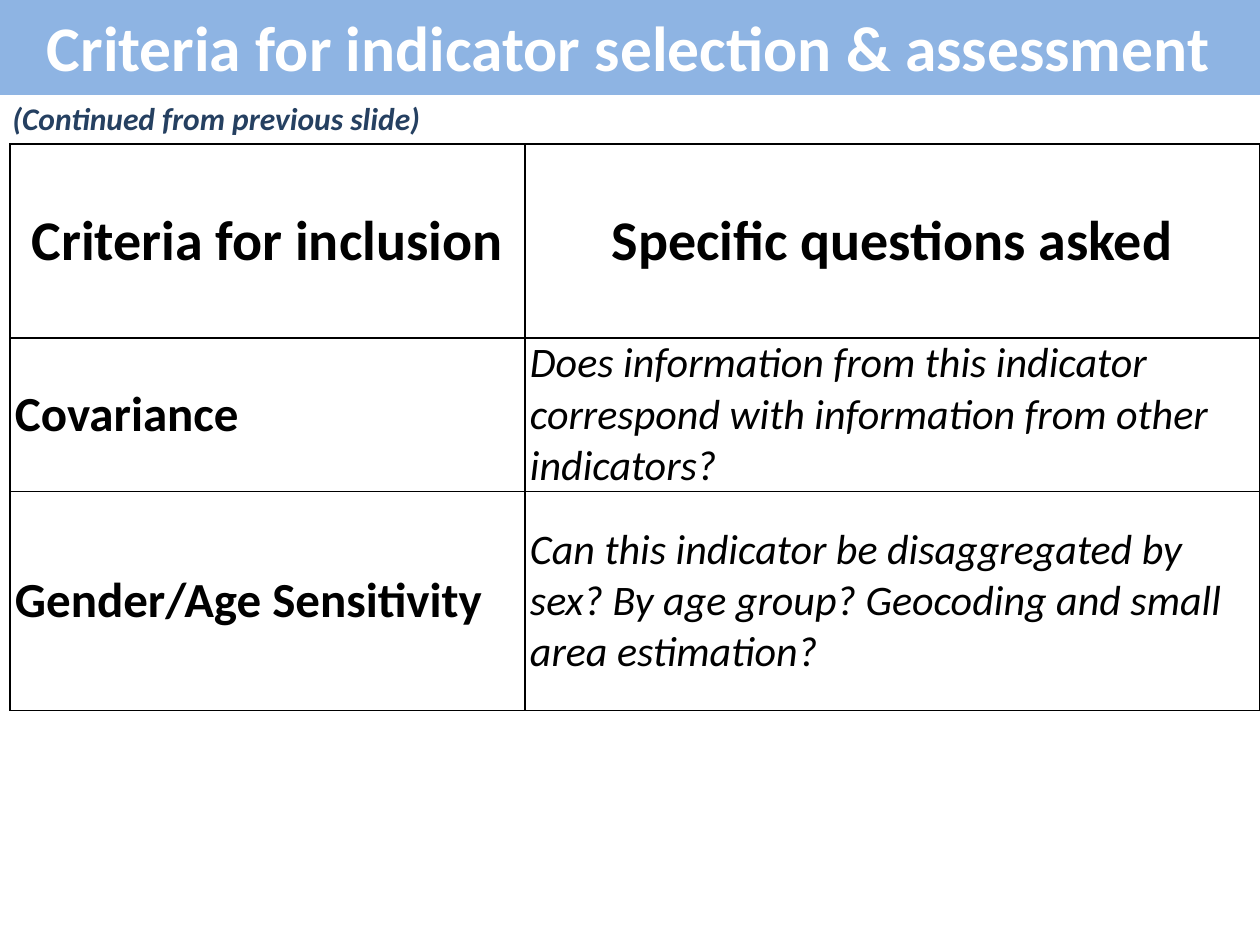
from dataclasses import dataclass

from lxml.etree import SubElement
from pptx import Presentation
from pptx.dml.color import RGBColor as Rgb
from pptx.enum.shapes import MSO_SHAPE as Kind
from pptx.enum.text import MSO_ANCHOR as Anchor, PP_ALIGN as Align
from pptx.oxml.ns import qn
from pptx.util import Emu, Pt

COLORS = {"band": "8EB4E3", "title": "FFFFFF", "note": "254061", "ink": "000000"}
SCALE = 914400 / 126


@dataclass(frozen=True)
class Style:
    size: float
    color: str = "ink"
    bold: bool = False
    slant: bool = False
    align: Align = Align.LEFT


@dataclass(frozen=True)
class Row:
    height: int
    texts: tuple[str, str]
    styles: tuple[Style, Style]


TITLE = Style(36.3, "title", bold=True, align=Align.CENTER)
NOTE = Style(18, "note", bold=True, slant=True)
HEAD = Style(32, bold=True, align=Align.CENTER)
NAME = Style(28, bold=True)
QUERY = Style(24, slant=True)

WIDTHS = (515, 735)
ROWS = (
    Row(194, ("Criteria for inclusion", "Specific questions asked"), (HEAD, HEAD)),
    Row(146, ("Covariance",
              "Does information from this indicator correspond with "
              "information from other indicators?"), (NAME, QUERY)),
    Row(219, ("Gender/Age Sensitivity",
              "Can this indicator be disaggregated by sex? By age group? "
              "Geocoding and small area estimation?"), (NAME, QUERY)),
)


def px(count: int) -> Emu:
    return Emu(round(count * SCALE))


def write(frame, text: str, style: Style) -> None:
    para = frame.paragraphs[0]
    para.text = text
    para.alignment = style.align
    font = para.font
    font.name = "Calibri"
    font.size = Pt(style.size)
    font.bold = style.bold
    font.italic = style.slant
    font.color.rgb = Rgb.from_string(COLORS[style.color])


def edge(cell) -> None:
    props = cell._tc.get_or_add_tcPr()
    for spot, side in enumerate(("lnL", "lnR", "lnT", "lnB")):
        line = SubElement(props, qn(f"a:{side}"), w=str(Pt(1)))
        fill = SubElement(line, qn("a:solidFill"))
        SubElement(fill, qn("a:srgbClr"), val=COLORS["ink"])
        props.insert(spot, line)


def add_band(slide) -> None:
    band = slide.shapes.add_shape(Kind.RECTANGLE, px(-2), px(-2), px(1262), px(97))
    band.shadow.inherit = False
    band.fill.solid()
    band.fill.fore_color.rgb = Rgb.from_string(COLORS["band"])
    band.line.fill.background()
    band.text_frame.vertical_anchor = Anchor.MIDDLE
    write(band.text_frame, "Criteria for indicator selection & assessment", TITLE)


def add_note(slide) -> None:
    box = slide.shapes.add_textbox(px(0), px(93), px(438), px(50))
    box.text_frame.word_wrap = False
    write(box.text_frame, "(Continued from previous slide)", NOTE)


def add_grid(slide) -> None:
    high = sum(row.height for row in ROWS)
    grid = slide.shapes.add_table(
        len(ROWS), len(WIDTHS), px(10), px(144), px(sum(WIDTHS)), px(high)).table
    grid.first_row = grid.horz_banding = False
    for col, width in zip(grid.columns, WIDTHS):
        col.width = px(width)
    for line, row in zip(grid.rows, ROWS):
        line.height = px(row.height)
        for cell, text, style in zip(line.cells, row.texts, row.styles):
            cell.margin_left = cell.margin_right = px(5)
            cell.margin_top = cell.margin_bottom = 0
            cell.vertical_anchor = Anchor.MIDDLE
            cell.fill.background()
            edge(cell)
            write(cell.text_frame, text, style)


def main() -> None:
    """Build the slide of indicator criteria and save it."""
    deck = Presentation()
    deck.slide_width, deck.slide_height = px(1260), px(945)
    slide = deck.slides.add_slide(deck.slide_layouts[6])
    add_band(slide)
    add_grid(slide)
    add_note(slide)
    deck.save("out.pptx")


if __name__ == "__main__":
    main()
